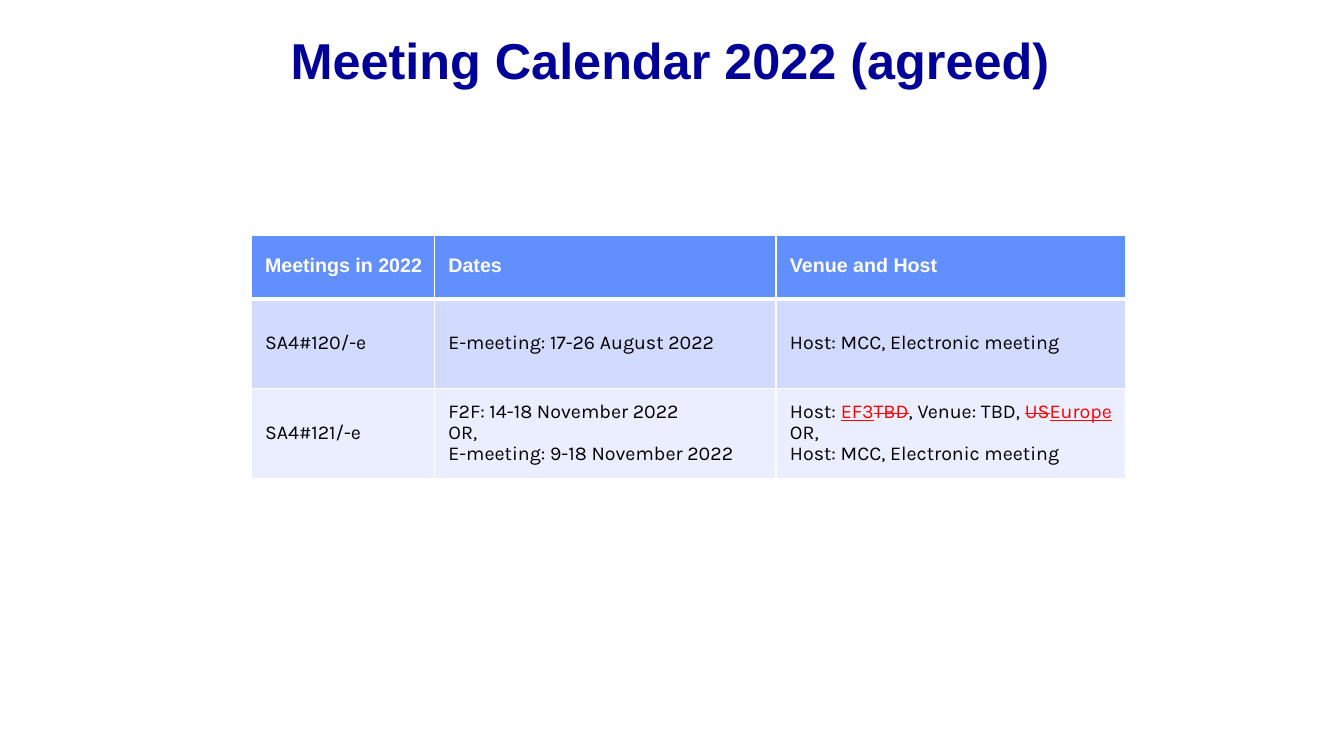
"""Builds the agreed meeting calendar slide for 2022."""
import pptx
import pptx.util
import pptx.dml.color
import pptx.enum.text
import pptx.oxml
import pptx.oxml.ns

TITLE = "Meeting Calendar 2022 (agreed)"
HEADS = ["Meetings in 2022", "Dates", "Venue and Host"]
HOST = "Host: MCC, Electronic meeting"
MEETINGS = [
    ["SA4#120/-e", "E-meeting: 17-26 August 2022", HOST],
    ["SA4#121/-e",
     ["F2F: 14-18 November 2022", "OR,", "E-meeting: 9-18 November 2022"],
     [["Host: ", ("EF3", "new"), ("TBD", "old"), ", Venue: TBD, ",
       ("US", "old"), ("Europe", "new")], "OR,", HOST]],
]
COLORS = {"title": "000099", "head": "618FFD", "odd": "D2DBFE", "even": "EAEEFF",
          "white": "FFFFFF", "black": "000000", "edit": "FF0000"}
WIDTHS = [131, 244, 250]
HEIGHTS = [45.4, 64.1, 64.1]
LEFT, TOP = 179.3, 168

Pt = pptx.util.Pt


def rgb(name):
    """Return the named colour."""
    return pptx.dml.color.RGBColor.from_string(COLORS[name])


def write(frame, text, size=14, face="Karla", color="black", bold=False,
          align=None, indent=0, level=0):
    """Fill a text frame with lines, each a string or a list of runs."""
    lines = text if isinstance(text, list) else [text]
    for i, line in enumerate(lines):
        para = frame.paragraphs[0] if i == 0 else frame.add_paragraph()
        para.level = level
        para.alignment = align
        para.line_spacing = 0.9
        props = para._p.get_or_add_pPr()
        props.set("marL", str(int(Pt(indent))))
        props.set("indent", "0")
        for part in line if isinstance(line, list) else [line]:
            words, mark = part if isinstance(part, tuple) else (part, None)
            run = para.add_run()
            run.text = words
            font = run.font
            font.name, font.size, font.bold = face, Pt(size), bold
            font.color.rgb = rgb("edit" if mark else color)
            if mark == "new":
                font.underline = True
            elif mark == "old":
                font._element.set("strike", "sngStrike")


def border(cell, base):
    """Draw white borders round a cell, with its own top and bottom widths."""
    props = cell._tc.get_or_add_tcPr()
    for side, width in zip("LRTB", (1, 1) + base):
        props.append(pptx.oxml.parse_xml(
            f'<a:ln{side} {pptx.oxml.ns.nsdecls("a")} w="{int(Pt(width))}">'
            f'<a:solidFill><a:srgbClr val="{COLORS["white"]}"/></a:solidFill>'
            f'</a:ln{side}>'))


def main():
    """Build and save the slide."""
    deck = pptx.Presentation()
    deck.slide_width, deck.slide_height = Pt(960), Pt(540)
    slide = deck.slides.add_slide(deck.slide_layouts[5])

    title = slide.shapes.title
    title.left, title.top, title.width, title.height = map(Pt, (44.6, 18, 868.3, 54))
    title.text_frame.vertical_anchor = pptx.enum.text.MSO_ANCHOR.MIDDLE
    write(title.text_frame, TITLE, size=36, face="Arial", color="title", bold=True,
          align=pptx.enum.text.PP_ALIGN.CENTER)

    rows = [HEADS] + MEETINGS
    table = slide.shapes.add_table(len(rows), len(HEADS), Pt(LEFT), Pt(TOP),
                                   Pt(sum(WIDTHS)), Pt(sum(HEIGHTS))).table
    for col, width in zip(table.columns, WIDTHS):
        col.width = Pt(width)
    for r, row in enumerate(rows):
        table.rows[r].height = Pt(HEIGHTS[r])
        head = r == 0
        fill = "head" if head else ("even", "odd")[r % 2]
        for c, text in enumerate(row):
            cell = table.cell(r, c)
            cell.vertical_anchor = pptx.enum.text.MSO_ANCHOR.MIDDLE
            border(cell, (3 if r == 1 else 1, 3 if head else 1))
            cell.fill.solid()
            cell.fill.fore_color.rgb = rgb(fill)
            write(cell.text_frame, text, face="Arial" if head else "Karla",
                  color="white" if head else "black", bold=head, indent=2.8,
                  level=1 if c == 2 and not head else 0)
    deck.save("out.pptx")


if __name__ == "__main__":
    main()
